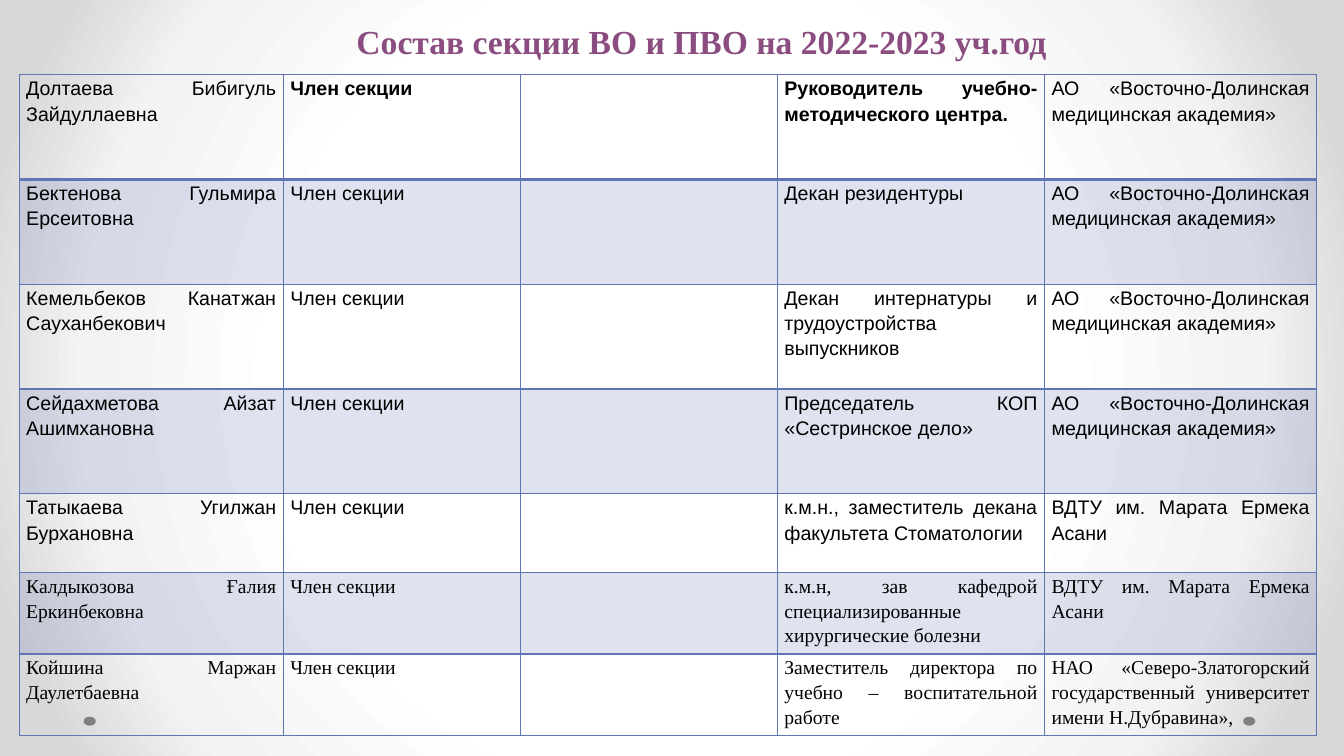
"""Build the slide listing the members of the section for 2022-2023."""
from dataclasses import dataclass

from lxml import etree
from pptx import Presentation
from pptx import util as u
from pptx.dml.color import RGBColor
from pptx.enum import shapes, text
from pptx.oxml import ns

BLACK = RGBColor(0x00, 0x00, 0x00)
PLUM = RGBColor(0x8B, 0x4D, 0x80)
BLUE = RGBColor(0x60, 0x76, 0xB4)
GREY = RGBColor(0x7F, 0x7F, 0x7F)
WHITE = RGBColor(0xFF, 0xFF, 0xFF)
PALE = RGBColor(0xF3, 0xF3, 0xF3)
SILVER = RGBColor(0xD8, 0xD8, 0xD8)
BACKDROP = ((0, WHITE), (50, WHITE), (76, PALE), (92, SILVER), (100, SILVER))

SANS = "Arial"
SERIF = "Times New Roman"
ROLE = "Член секции"
ACADEMY = "АО «Восточно-Долинская медицинская академия»"
UNIVERSITY = "ВДТУ им. Марата Ермека Асани"
TITLE = "Состав секции ВО и ПВО на 2022-2023 уч.год "
COLUMN_WIDTHS = (2.62, 2.35, 2.55, 2.65, 2.7)


@dataclass(frozen=True)
class Member:
    """One row of the table."""

    name: str
    post: str
    employer: str
    height: float = 1.04
    font: str = SANS
    bold: bool = False


MEMBERS = (
    Member("Долтаева Бибигуль Зайдуллаевна",
           "Руководитель учебно-методического центра.", ACADEMY, bold=True),
    Member("Бектенова Гульмира Ерсеитовна", "Декан резидентуры", ACADEMY),
    Member("Кемельбеков Канатжан Сауханбекович",
           "Декан интернатуры и трудоустройства выпускников", ACADEMY),
    Member("Сейдахметова Айзат Ашимхановна",
           "Председатель КОП «Сестринское дело»", ACADEMY),
    Member("Татыкаева Угилжан Бурхановна",
           "к.м.н., заместитель декана факультета Стоматологии",
           UNIVERSITY, 0.78),
    Member("Калдыкозова Ғалия Еркинбековна",
           "к.м.н, зав кафедрой специализированные хирургические болезни",
           UNIVERSITY, 0.81, SERIF),
    Member("Койшина Маржан Даулетбаевна",
           "Заместитель директора по учебно – воспитательной работе",
           "НАО «Северо-Златогорский государственный университет "
           "имени Н.Дубравина»,", 0.81, SERIF),
)


def add_node(parent, tag: str, **attributes):
    """Append a drawing element and return it."""
    return etree.SubElement(parent, ns.qn(tag), attributes)


def paint_backdrop(page) -> None:
    """Give the page a round gradient, white in the middle."""
    page.background.fill.gradient()
    gradient = page.element.find(".//" + ns.qn("a:gradFill"))
    for child in list(gradient):
        gradient.remove(child)
    stops = add_node(gradient, "a:gsLst")
    for percent, color in BACKDROP:
        stop = add_node(stops, "a:gs", pos=str(percent * 1000))
        add_node(stop, "a:srgbClr", val=str(color))
    circle = add_node(gradient, "a:path", path="circle")
    add_node(circle, "a:fillToRect", l="50000", t="50000", r="50000", b="50000")


def add_dot(page, left: float) -> None:
    """Draw one small grey ellipse near the foot of the page."""
    dot = page.shapes.add_shape(
        shapes.MSO_SHAPE.OVAL, u.Inches(left), u.Inches(7.11),
        u.Inches(0.12), u.Inches(0.09))
    dot.shadow.inherit = False
    dot.fill.solid()
    dot.fill.fore_color.rgb = GREY
    dot.line.fill.background()


def add_span(para, words: str, font: str, size: int, color: RGBColor,
             bold: bool) -> None:
    """Add one run of formatted text."""
    span = para.add_run()
    span.text = words
    span.font.name = font
    span.font.size = u.Pt(size)
    span.font.color.rgb = color
    span.font.bold = bold


def style_cell(cell, shaded: bool, bottom: int) -> None:
    """Set the fill, borders and margins of a cell."""
    cell.margin_left = cell.margin_right = u.Inches(0.07)
    cell.margin_top = cell.margin_bottom = 0
    properties = cell._tc.get_or_add_tcPr()
    for side in "LRTB":
        width = u.Pt(bottom if side == "B" else 1)
        border = add_node(properties, f"a:ln{side}", w=str(int(width)))
        fill = add_node(border, "a:solidFill")
        add_node(fill, "a:srgbClr", val=str(BLUE))
    if shaded:
        fill = add_node(properties, "a:solidFill")
        color = add_node(fill, "a:srgbClr", val=str(BLUE))
        add_node(color, "a:alpha", val="20000")
    else:
        add_node(properties, "a:noFill")


def add_members(page) -> None:
    """Draw the table of members, shading every second row."""
    table = page.shapes.add_table(
        len(MEMBERS), len(COLUMN_WIDTHS), u.Inches(0.19), u.Inches(0.74),
        u.Inches(sum(COLUMN_WIDTHS)),
        u.Inches(sum(member.height for member in MEMBERS))).table
    table.first_row = table.horz_banding = False
    for column, width in zip(table.columns, COLUMN_WIDTHS):
        column.width = u.Inches(width)
    for index, member in enumerate(MEMBERS):
        row = table.rows[index]
        row.height = u.Inches(member.height)
        entries = ((member.name, False), (ROLE, member.bold), ("", False),
                   (member.post, member.bold), (member.employer, False))
        for cell, (words, bold) in zip(row.cells, entries):
            style_cell(cell, index % 2 == 1, 2 if index == 0 else 1)
            if words:
                para = cell.text_frame.paragraphs[0]
                para.alignment = text.PP_ALIGN.JUSTIFY
                para.line_spacing = 1.15
                add_span(para, words, member.font, 14, BLACK, bold)


def add_title(page) -> None:
    """Write the centred heading."""
    box = page.shapes.add_textbox(
        u.Inches(0.87), u.Inches(0.2), u.Inches(12.26), u.Inches(0.41))
    frame = box.text_frame
    frame.word_wrap = True
    frame.auto_size = text.MSO_AUTO_SIZE.SHAPE_TO_FIT_TEXT
    frame.margin_left = frame.margin_right = frame.margin_bottom = 0
    frame.margin_top = u.Inches(0.01)
    para = frame.paragraphs[0]
    para.alignment = text.PP_ALIGN.CENTER
    add_span(para, TITLE, SERIF, 24, PLUM, True)


def main() -> None:
    """Build and save the deck."""
    deck = Presentation()
    deck.slide_width = u.Inches(13.33)
    deck.slide_height = u.Inches(7.5)
    page = deck.slides.add_slide(deck.slide_layouts[6])
    paint_backdrop(page)
    for left in (12.33, 0.83):
        add_dot(page, left)
    add_members(page)
    add_title(page)
    deck.save("out.pptx")


if __name__ == "__main__":
    main()
